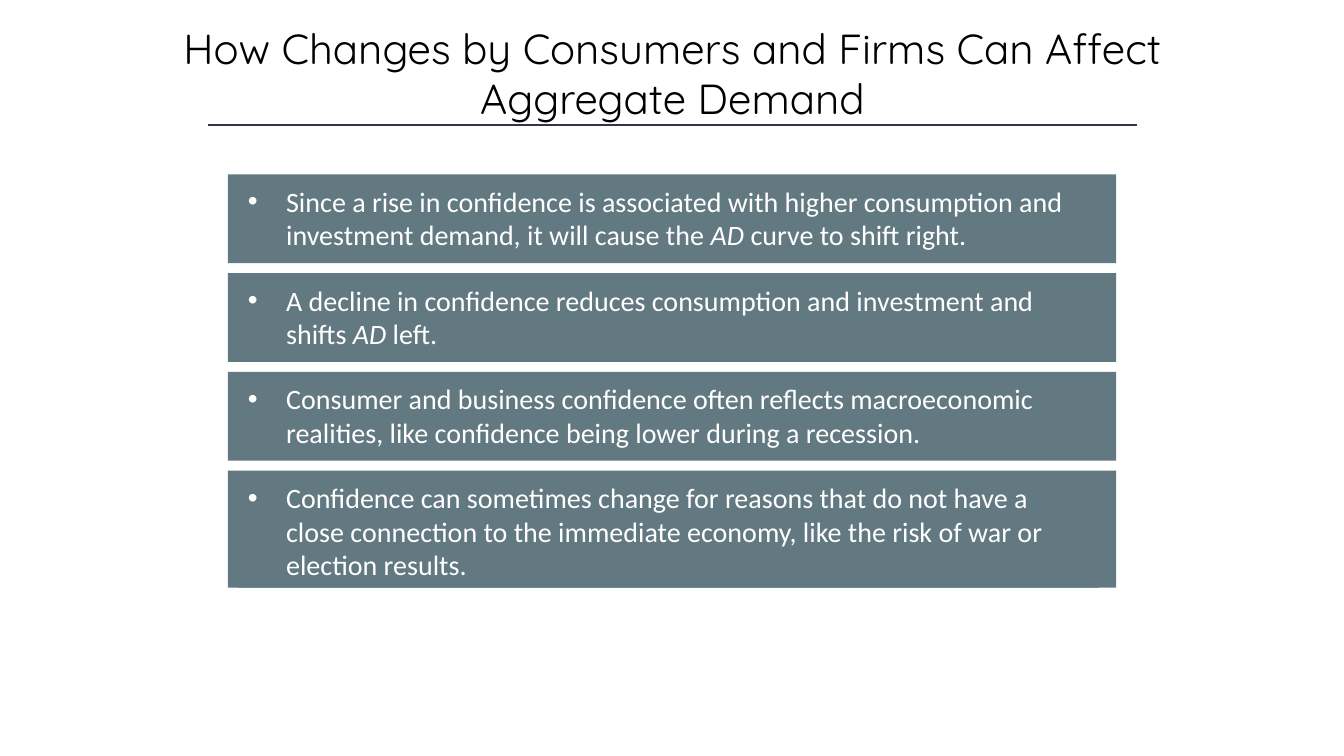
from lxml import etree
from pptx import Presentation
from pptx.dml.color import RGBColor
from pptx.enum.shapes import MSO_CONNECTOR, MSO_SHAPE
from pptx.enum.text import MSO_ANCHOR, MSO_AUTO_SIZE, PP_ALIGN
from pptx.oxml.ns import qn
from pptx.util import Emu, Pt

RECTANGLE = MSO_SHAPE.RECTANGLE
STRAIGHT = MSO_CONNECTOR.STRAIGHT
TOP = MSO_ANCHOR.TOP
LEFT, CENTER = PP_ALIGN.LEFT, PP_ALIGN.CENTER
NO_FIT = MSO_AUTO_SIZE.NONE

TITLE = "How Changes by Consumers and Firms Can Affect Aggregate Demand"
# Each card: panel height, text height, spans of (text, italic)
CARDS = [
    (88, 77, [
        ("Since a rise in confidence is associated with higher consumption and "
         "investment demand, it will cause the ", False),
        ("AD", True),
        (" curve to shift right.", False),
    ]),
    (88, 77, [
        ("A decline in confidence reduces consumption and investment and shifts ", False),
        ("AD", True),
        (" left.", False),
    ]),
    (88, 77, [
        ("Consumer and business confidence often reflects macroeconomic realities, "
         "like confidence being lower during a recession.", False),
    ]),
    (116, 111, [
        ("Confidence can sometimes change for reasons that do not have a close "
         "connection to the immediate economy, like the risk of war or election "
         "results.", False),
    ]),
]

COLORS = {"title": "000000", "rule": "323542", "card": "627981", "text": "FFFFFF"}
TITLE_FONT = {"name": "Quicksand", "size": Pt(30)}
CARD_FONT = {"name": "Calibri", "size": Pt(20)}
FRAME_FORMAT = {"word_wrap": True, "auto_size": NO_FIT, "vertical_anchor": TOP}

SLIDE_SIZE = (1333, 750)
TITLE_BOX = (167, 17, 1000, 111)
RULE = (206, 124, 1128, 124)
CARD_LEFT, CARD_TOP, CARD_WIDTH, CARD_GAP = 226, 173, 881, 10
TEXT_INSET_X, TEXT_INSET_Y, TEXT_WIDTH = 10, 5, 854
BULLET_INDENT = 38


def px(length):
    """Convert px, at 100 to the inch, to EMU."""
    return Emu(length * 9144)


def color(name):
    return RGBColor.from_string(COLORS[name])


def apply(target, values):
    for name, value in values.items():
        setattr(target, name, value)


def add_span(para, text, font, color_name, italic=False):
    span = para.add_run()
    span.text = text
    apply(span.font, {**font, "italic": italic})
    span.font.color.rgb = color(color_name)


def add_bullet(para):
    properties = para._p.get_or_add_pPr()
    properties.set("marL", str(px(BULLET_INDENT)))
    properties.set("indent", str(-px(BULLET_INDENT)))
    etree.SubElement(properties, qn("a:buFont")).set("typeface", "Arial")
    etree.SubElement(properties, qn("a:buChar")).set("char", "•")


def add_block(page, *bounds):
    """Add a flat rectangle in the card colour."""
    block = page.shapes.add_shape(RECTANGLE, *map(px, bounds))
    block.shadow.inherit = False
    block.fill.solid()
    block.fill.fore_color.rgb = color("card")
    block.line.fill.background()
    return block


def add_title(page):
    title = page.shapes.title
    apply(title, dict(zip(("left", "top", "width", "height"), map(px, TITLE_BOX))))
    apply(title.text_frame, FRAME_FORMAT)
    para = title.text_frame.paragraphs[0]
    para.alignment = CENTER
    add_span(para, TITLE, TITLE_FONT, "title")


def add_rule(page):
    rule = page.shapes.add_connector(STRAIGHT, *map(px, RULE))
    rule.line.color.rgb = color("rule")
    rule.line.width = Pt(1)
    etree.SubElement(rule._element.spPr, qn("a:effectLst"))


def add_cards(page):
    top = CARD_TOP
    for panel_height, text_height, spans in CARDS:
        add_block(page, CARD_LEFT, top, CARD_WIDTH, panel_height)
        box = add_block(page, CARD_LEFT + TEXT_INSET_X, top + TEXT_INSET_Y,
                        TEXT_WIDTH, text_height)
        apply(box.text_frame, FRAME_FORMAT)
        para = box.text_frame.paragraphs[0]
        para.alignment = LEFT
        add_bullet(para)
        for text, italic in spans:
            add_span(para, text, CARD_FONT, "text", italic)
        top += panel_height + CARD_GAP


def main():
    deck = Presentation()
    deck.slide_width, deck.slide_height = map(px, SLIDE_SIZE)
    page = deck.slides.add_slide(deck.slide_layouts.get_by_name("Title Only"))
    add_title(page)
    add_rule(page)
    add_cards(page)
    deck.save("out.pptx")


if __name__ == "__main__":
    main()
